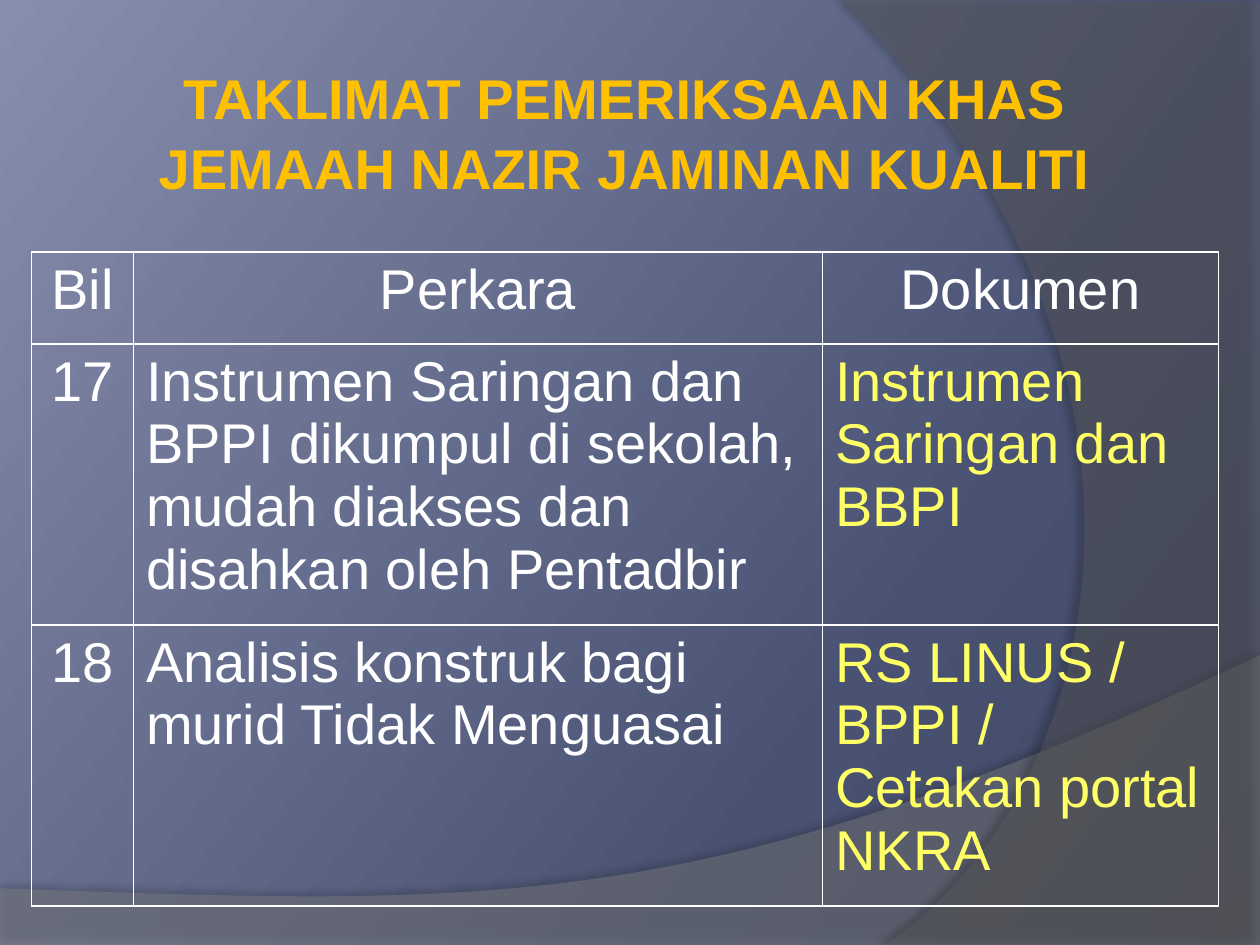
import copy
import pptx
import pptx.util
import pptx.dml.color
import pptx.enum.text
import pptx.oxml
import pptx.oxml.ns

Inches, Pt = pptx.util.Inches, pptx.util.Pt
RGBColor = pptx.dml.color.RGBColor
Align = pptx.enum.text.PP_ALIGN
NS = pptx.oxml.ns.nsdecls("a")

DARK = RGBColor(0x3D, 0x44, 0x60)
MID = RGBColor(0x49, 0x52, 0x72)
LIGHT = RGBColor(0x86, 0x8D, 0xAD)
GREY = RGBColor(0x7F, 0x7F, 0x7F)
SLATE = RGBColor(0x5E, 0x5E, 0x5E)
GOLD = RGBColor(0xFF, 0xC0, 0x00)
WHITE = RGBColor(0xFF, 0xFF, 0xFF)
YELLOW = RGBColor(0xFF, 0xFF, 0x66)


def curve(a, b, c, d, steps=48):
    """Points along a cubic curve from a to d, without a itself."""
    points = []
    for i in range(1, steps + 1):
        t = i / steps
        u = 1 - t
        points.append(tuple(
            u**3 * p + 3 * u * u * t * q + 3 * u * t * t * r + t**3 * s
            for p, q, r, s in zip(a, b, c, d)))
    return points


def style(par, color, bold=False):
    for run in par.runs:
        run.font.name = "Arial"
        run.font.size = Pt(32)
        run.font.bold = bold
        run.font.color.rgb = color


deck = pptx.Presentation()
deck.slide_width, deck.slide_height = Inches(10), Inches(7.5)
slide = deck.slides.add_slide(deck.slide_layouts[5])

# Background gradient with three stops
fill = slide.background.fill
fill.gradient()
fill.gradient_angle = 143
stops = slide.element.xpath(".//a:gsLst")[0]
stops.append(copy.deepcopy(stops[0]))
for stop, place, color in zip(fill.gradient_stops, (0, 0.3, 1), (DARK, MID, LIGHT)):
    stop.position = place
    stop.color.rgb = color

# Translucent waves: outline, colour, opacity, shadow opacity, distance, direction
low = [(0, 7.05), (0, 7.5), (10, 7.5), (10, 5.2)]
low += curve((10, 5.2), (5.59, 7.29), (3.91, 7.19), (0, 7.05))
side = [(10, 0.02), (10, 7.5), (7.03, 7.5)]
side += curve((7.03, 7.5), (8.91, 6.19), (9.47, 2.75), (6.68, 0))
waves = [(low, GREY, 45, 35, 3.5, 270), (side, SLATE, 40, 45, 4, 180)]
for points, color, alpha, shade, dist, angle in waves:
    points = [(Inches(x), Inches(y)) for x, y in points]
    pen = slide.shapes.build_freeform(*points[0])
    pen.add_line_segments(points[1:], close=True)
    wave = pen.convert_to_shape()
    wave.line.fill.background()
    wave.fill.solid()
    wave.fill.fore_color.rgb = color
    tint = wave.element.spPr.xpath("./a:solidFill/a:srgbClr")[0]
    tint.append(pptx.oxml.parse_xml(f'<a:alpha {NS} val="{alpha * 1000}"/>'))
    wave.shadow.inherit = False
    glow = wave.element.spPr.xpath("./a:effectLst")[0]
    glow.append(pptx.oxml.parse_xml(
        f'<a:outerShdw {NS} blurRad="{Pt(4)}" dist="{Pt(dist)}" '
        f'dir="{angle * 60000}" algn="ctr" rotWithShape="0">'
        f'<a:srgbClr val="000000"><a:alpha val="{shade * 1000}"/></a:srgbClr>'
        '</a:outerShdw>'))

# Title, brought in front of the waves
title = slide.shapes.title
slide.shapes.element.append(title.element)
title.left, title.top = Inches(0.33), Inches(0.46)
title.width, title.height = Inches(9.25), Inches(1.18)
frame = title.text_frame
frame.text = "TAKLIMAT PEMERIKSAAN KHAS\nJEMAAH NAZIR JAMINAN KUALITI"
frame.word_wrap = True
frame.auto_size = pptx.enum.text.MSO_AUTO_SIZE.NONE
frame.vertical_anchor = pptx.enum.text.MSO_ANCHOR.BOTTOM
for par in frame.paragraphs:
    par.alignment = Align.CENTER
    style(par, GOLD, bold=True)
frame.paragraphs[1].space_before = Pt(1.5)

# Table
rows = [
    ("Bil", "Perkara", "Dokumen"),
    ("17", "Instrumen Saringan dan BPPI dikumpul di sekolah, mudah diakses "
     "dan disahkan oleh Pentadbir", "Instrumen Saringan dan BBPI"),
    ("18", "Analisis konstruk bagi murid Tidak Menguasai",
     "RS LINUS / BPPI / Cetakan portal NKRA"),
]
table = slide.shapes.add_table(
    3, 3, Inches(0.25), Inches(2), Inches(9.42), Inches(5.19)).table
table.first_row = table.horz_banding = False
for col, width in zip(table.columns, (0.81, 5.47, 3.14)):
    col.width = Inches(width)
for row, height in zip(table.rows, (0.73, 2.23, 2.23)):
    row.height = Inches(height)
for r, texts in enumerate(rows):
    for c, text in enumerate(texts):
        cell = table.cell(r, c)
        cell.text_frame.text = text
        par = cell.text_frame.paragraphs[0]
        par.alignment = Align.CENTER if r == 0 or c == 0 else Align.LEFT
        style(par, YELLOW if r and c == 2 else WHITE)
        cell.fill.background()
        props = cell._tc.get_or_add_tcPr()
        for i, edge in enumerate("LRTB"):
            props.insert(i, pptx.oxml.parse_xml(
                f'<a:ln{edge} {NS} w="{Pt(1)}"><a:solidFill>'
                f'<a:srgbClr val="{WHITE}"/></a:solidFill></a:ln{edge}>'))

deck.save("out.pptx")
